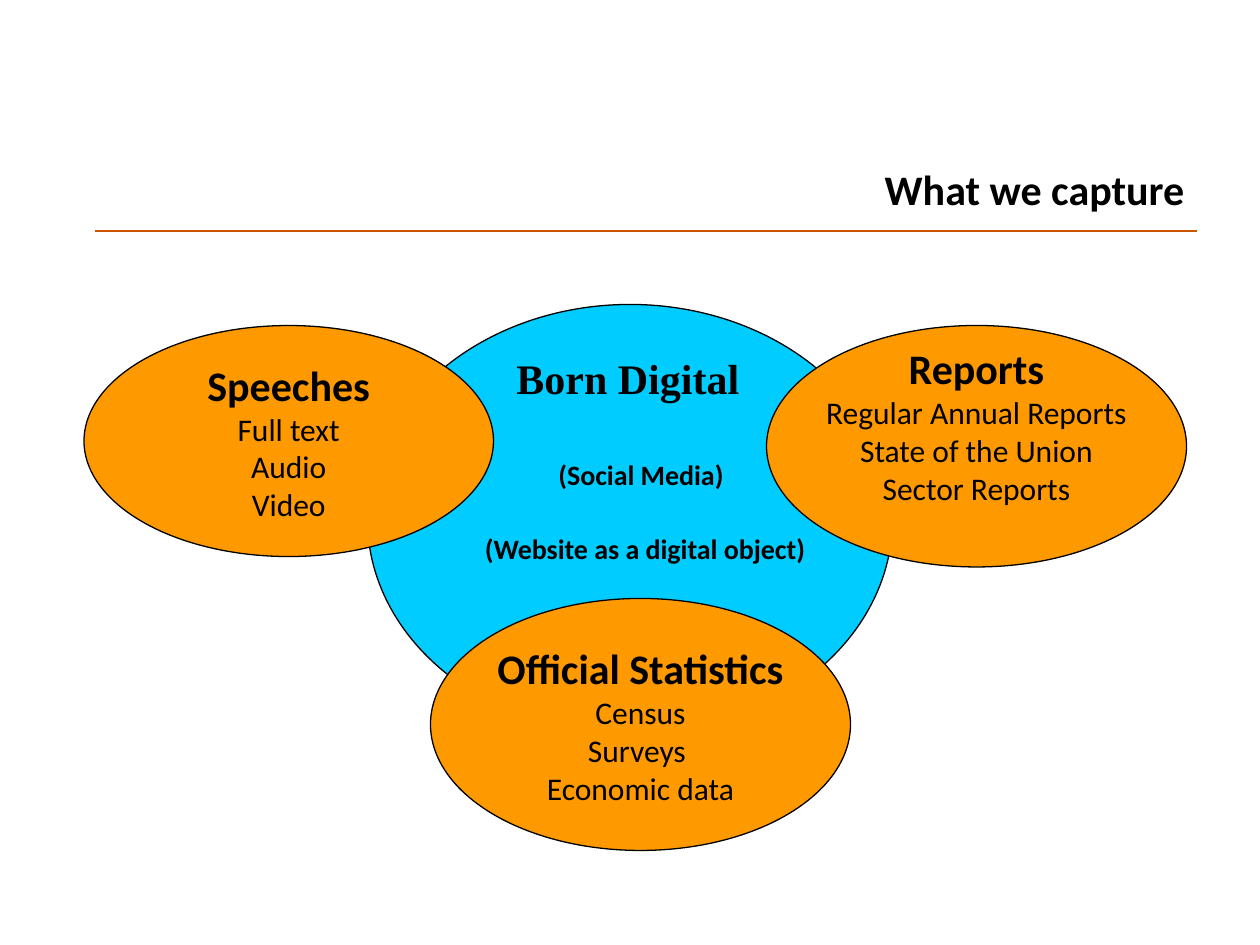
"""Build the slide showing what we capture."""
from dataclasses import dataclass
from lxml.etree import SubElement
from pptx import Presentation
from pptx.dml.color import RGBColor
from pptx.enum.shapes import MSO_CONNECTOR as Link, MSO_SHAPE as Form
from pptx.enum.text import MSO_ANCHOR as Anchor, MSO_AUTO_SIZE as Fit, PP_ALIGN as Align
from pptx.oxml.ns import qn
from pptx.slide import Slide
from pptx.util import Pt

BLACK = RGBColor(0x00, 0x00, 0x00)
CYAN = RGBColor(0x00, 0xCC, 0xFF)
AMBER = RGBColor(0xFF, 0x99, 0x00)
RUST = RGBColor(0xCC, 0x55, 0x00)
HEAD = {"name": "Calibri", "size": Pt(24), "bold": True}
ITEM = HEAD | {"size": Pt(18), "bold": False}
NOTE = HEAD | {"size": Pt(16)}
SERIF = HEAD | {"name": "Times New Roman"}


@dataclass
class Oval:
    box: tuple[float, ...]
    fill: RGBColor
    lines: tuple[str, ...] = ()
    base: float = 3.6


@dataclass
class Label:
    box: tuple[float, ...]
    text: str
    style: dict


OVALS = [
    Oval((210, 174, 300, 246), CYAN),
    Oval((48, 186, 234, 132), AMBER, ("Speeches", "Full text", "Audio", "Video")),
    Oval((246, 342, 240, 144), AMBER,
         ("Official Statistics", "Census", "Surveys ", "Economic data")),
    Oval((438, 186, 240, 138), AMBER,
         ("Reports", "Regular Annual Reports", "State of the Union", "Sector Reports"), 28),
]
LABELS = [
    Label((288, 198, 142, 36), "Born Digital", SERIF),
    Label((270, 300, 199, 27), "(Website as a digital object)", NOTE),
    Label((312, 258, 109, 27), "(Social Media)", NOTE),
]


def points(box: tuple[float, ...]) -> list[Pt]:
    return [Pt(n) for n in box]


def write(para, text: str, style: dict, align: Align) -> None:
    para.alignment = align
    font = para.add_run().font
    para.runs[0].text = text
    for key, value in style.items():
        setattr(font, key, value)
    font.color.rgb = BLACK


def draw_oval(slide: Slide, oval: Oval) -> None:
    shape = slide.shapes.add_shape(Form.OVAL, *points(oval.box))
    shape.shadow.inherit = False
    shape.fill.solid()
    shape.fill.fore_color.rgb = oval.fill
    shape.line.color.rgb = BLACK
    shape.line.width = Pt(0.75)
    frame = shape.text_frame
    frame.word_wrap = False
    frame.vertical_anchor = Anchor.MIDDLE
    frame.margin_bottom = Pt(oval.base)
    for i, text in enumerate(oval.lines):
        para = frame.add_paragraph() if i else frame.paragraphs[0]
        write(para, text, ITEM if i else HEAD, Align.CENTER)


def draw_label(slide: Slide, label: Label) -> None:
    frame = slide.shapes.add_textbox(*points(label.box)).text_frame
    frame.word_wrap = False
    frame.auto_size = Fit.SHAPE_TO_FIT_TEXT
    write(frame.paragraphs[0], label.text, label.style, Align.LEFT)


def draw_rule(slide: Slide) -> None:
    rule = slide.shapes.add_connector(Link.STRAIGHT, *points((54, 132, 684, 132)))
    rule.line.color.rgb = RUST
    rule.line.width = Pt(0.75)
    SubElement(rule._element.spPr, qn("a:effectLst"))


def set_title(slide: Slide) -> None:
    title = slide.shapes.title
    title.left, title.top, title.width, title.height = points((48, 90, 636, 66))
    frame = title.text_frame
    frame.vertical_anchor = Anchor.TOP
    frame.auto_size = Fit.NONE
    write(frame.paragraphs[0], "What we capture", HEAD, Align.RIGHT)


def main() -> None:
    deck = Presentation()
    deck.slide_width, deck.slide_height = points((720, 540))
    slide = deck.slides.add_slide(deck.slide_layouts[5])
    set_title(slide)
    for oval in OVALS:
        draw_oval(slide, oval)
    draw_rule(slide)
    for label in LABELS:
        draw_label(slide, label)
    deck.save("out.pptx")


if __name__ == "__main__":
    main()
